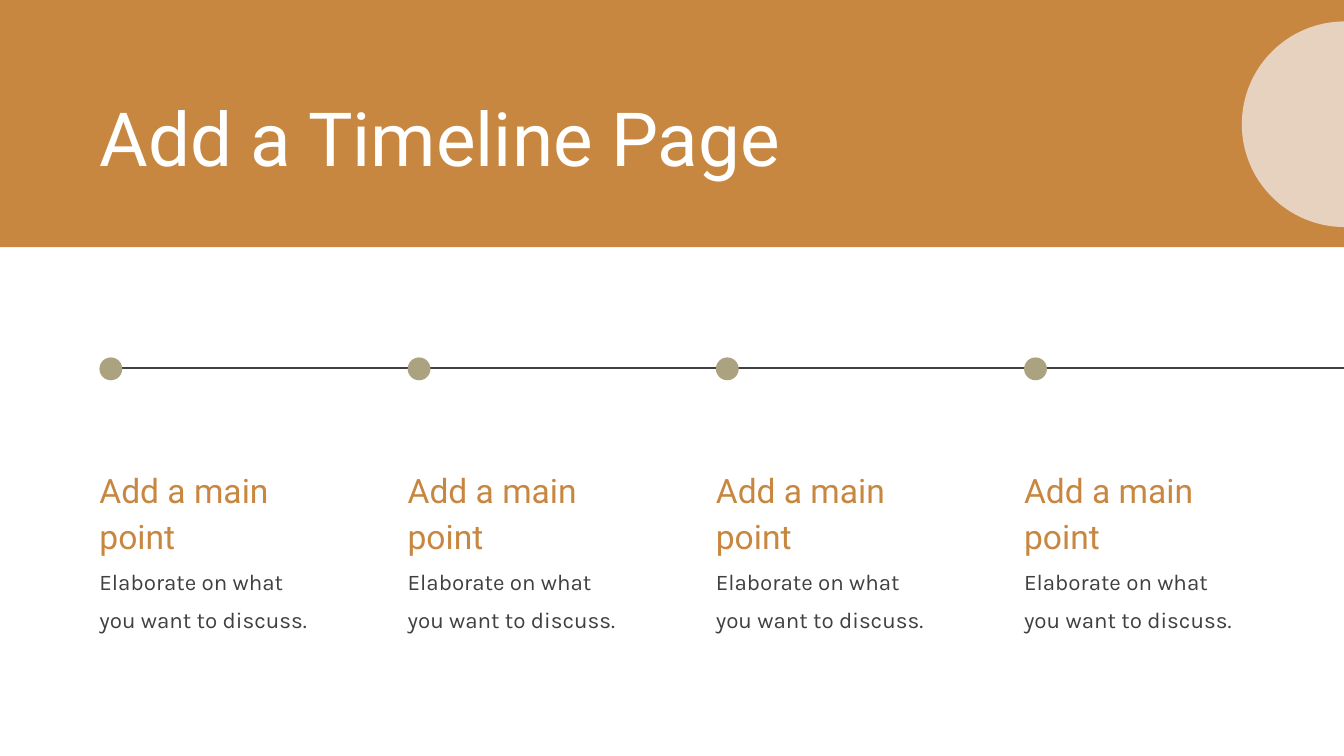
from pptx import Presentation
from pptx.dml.color import RGBColor
from pptx.enum.shapes import MSO_CONNECTOR, MSO_SHAPE
from pptx.enum.text import MSO_ANCHOR, MSO_AUTO_SIZE, PP_ALIGN
from pptx.util import Inches, Pt
from lxml.etree import SubElement
from pptx.oxml.ns import qn

ORANGE = RGBColor(0xC8, 0x87, 0x41)
BEIGE = RGBColor(0xE7, 0xD2, 0xBF)
OLIVE = RGBColor(0xAB, 0xA3, 0x7F)
DARK = RGBColor(0x40, 0x40, 0x40)
WHITE = RGBColor(0xFF, 0xFF, 0xFF)

LEFT, LAST = 0.74, 7.62
COLUMNS = [LEFT + i * (LAST - LEFT) / 3 for i in range(4)]
DOT = 0.17
AXIS_Y = 2.74


def add_filled(shapes, kind, x, y, w, h, color):
    sp = shapes.add_shape(kind, Inches(x), Inches(y), Inches(w), Inches(h))
    sp.shadow.inherit = False
    sp.fill.solid()
    sp.fill.fore_color.rgb = color
    sp.line.fill.background()
    return sp


def write_text(sp, text, font, size, color, spacing):
    tf = sp.text_frame
    tf.word_wrap = True
    tf.auto_size = MSO_AUTO_SIZE.SHAPE_TO_FIT_TEXT
    tf.vertical_anchor = MSO_ANCHOR.TOP
    tf.margin_left = tf.margin_right = tf.margin_top = tf.margin_bottom = 0
    p = tf.paragraphs[0]
    p.alignment = PP_ALIGN.LEFT
    p.line_spacing = spacing
    r = p.add_run()
    r.text = text
    r.font.name = font
    r.font.size = Pt(size)
    r.font.color.rgb = color


# Widescreen slide, 16:9
prs = Presentation()
prs.slide_width = Inches(10)
prs.slide_height = Inches(10 * 9 / 16)
s = prs.slides.add_slide(prs.slide_layouts[5])

# Header band, placed behind the title
band = add_filled(s.shapes, MSO_SHAPE.RECTANGLE, 0, 0, 10, 1.84, ORANGE)
title = s.shapes.title
title.element.addprevious(band.element)
title.left, title.top = Inches(LEFT), Inches(0.62)
title.width, title.height = Inches(7.24), Inches(0.67)
write_text(title, "Add a Timeline Page", "Roboto", 40, WHITE, 1.1)

# Text columns
for x in COLUMNS:
    column = s.shapes.add_group_shape()
    for y, h, text, font, size, color, spacing in [
        (4.15, 0.48, "Elaborate on what you want to discuss.", "Karla", 12, DARK, 1.4),
        (3.45, 0.65, "Add a main point", "Roboto", 18, ORANGE, 1.15),
    ]:
        box = column.shapes.add_textbox(Inches(x), Inches(y), Inches(1.64), Inches(h))
        write_text(box, text, font, size, color, spacing)

# Timeline axis and dots
timeline = s.shapes.add_group_shape()
axis = timeline.shapes.add_connector(
    MSO_CONNECTOR.STRAIGHT, Inches(LEFT + DOT / 2), Inches(AXIS_Y), Inches(10), Inches(AXIS_Y))
axis.line.color.rgb = DARK
axis.line.width = Pt(1)
SubElement(axis.element.spPr, qn("a:effectLst"))
for x in COLUMNS:
    add_filled(timeline.shapes, MSO_SHAPE.OVAL, x, 2.66, DOT, DOT, OLIVE)

# Circle running off the right edge
add_filled(s.shapes, MSO_SHAPE.OVAL, 9.24, 0.16, 1.53, 1.53, BEIGE)

prs.save("out.pptx")
